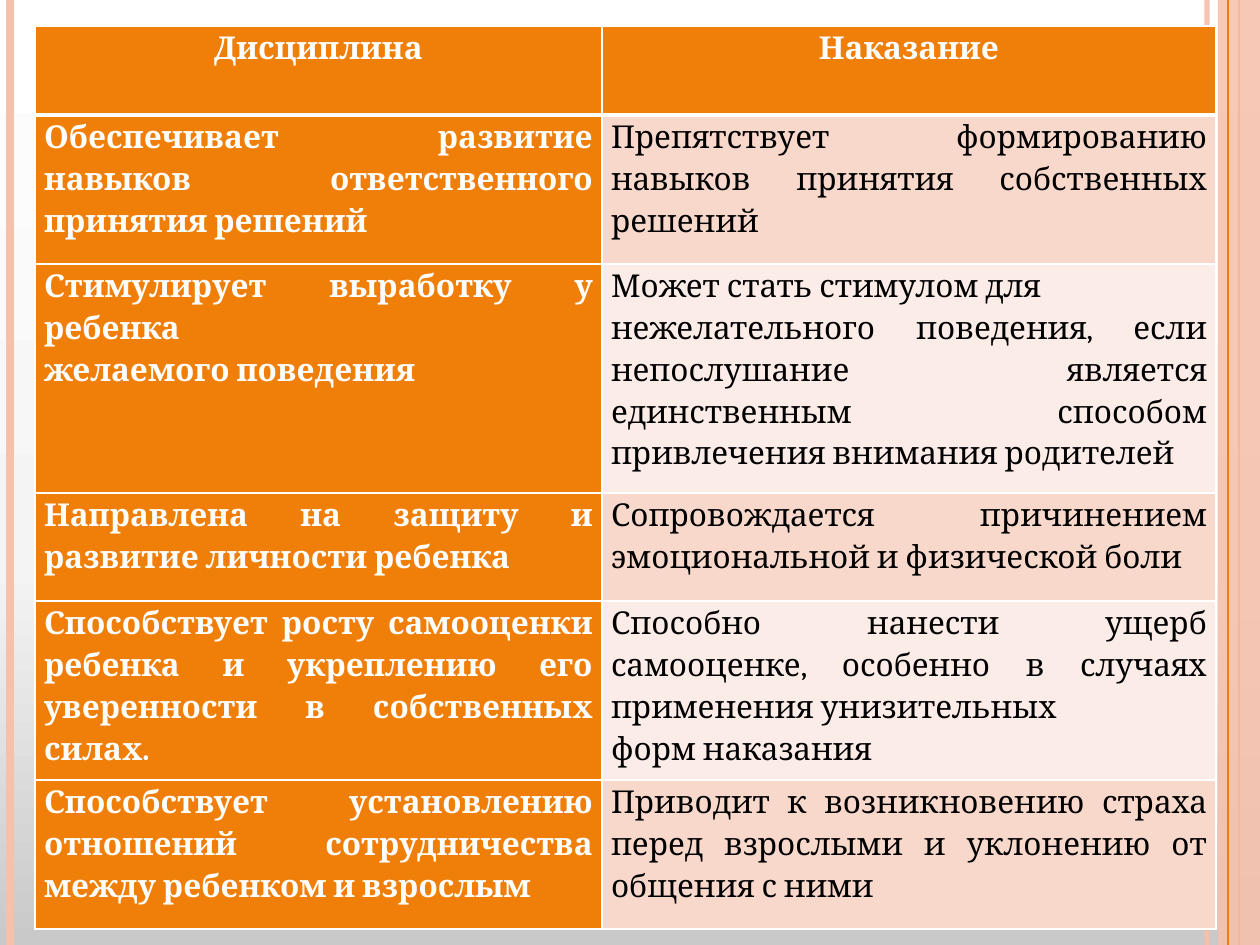
import lxml.etree
import pptx
import pptx.dml.color
import pptx.enum.shapes
import pptx.enum.text
import pptx.oxml.ns
import pptx.util

PX = 914400 / 126
PAGE_WIDTH, PAGE_HEIGHT = 1260, 945
FONT = "Cambria"
COLORS = {
    "accent": "F07F09",
    "stripe": "F6C0AB",
    "band_dark": "F9D8CC",
    "band_light": "FCECE7",
    "white": "FFFFFF",
    "black": "000000",
}
BACKGROUND_STOPS = [(0, "C9C9C9"), (40, "F4F4F4"), (100, "FFFFFF")]
COLUMN_WIDTHS = [567, 614]
ROW_HEIGHTS = [89, 149, 229, 108, 179, 149]
ROWS = [
    ("Дисциплина", "Наказание"),
    ("Обеспечивает развитие навыков ответственного принятия решений",
     "Препятствует формированию навыков принятия собственных решений"),
    ("Стимулирует выработку у ребенка\nжелаемого поведения",
     "Может стать стимулом для\nнежелательного поведения, если непослушание "
     "является единственным способом привлечения внимания родителей"),
    ("Направлена на защиту и развитие личности ребенка",
     "Сопровождается причинением эмоциональной и физической боли"),
    ("Способствует росту самооценки ребенка и укреплению его уверенности "
     "в собственных силах.",
     "Способно нанести ущерб самооценке, особенно в случаях применения "
     "унизительных\nформ наказания"),
    ("Способствует установлению отношений сотрудничества между ребенком "
     "и взрослым",
     "Приводит к возникновению страха перед взрослыми и уклонению от "
     "общения с ними"),
]


def px(length):
    return pptx.util.Emu(round(length * PX))


def rgb(name):
    return pptx.dml.color.RGBColor.from_string(COLORS[name])


def add_xml(parent, tag, **attributes):
    return lxml.etree.SubElement(parent, pptx.oxml.ns.qn(tag), attributes)


def set_opacity(shape, percent):
    color = next(shape.element.spPr.iter(pptx.oxml.ns.qn("a:srgbClr")))
    add_xml(color, "a:alpha", val=str(percent * 1000))


def set_background(page):
    fill = page.background.fill
    fill.gradient()
    fill.gradient_angle = 90
    stops = next(page.element.iter(pptx.oxml.ns.qn("a:gsLst")))
    for stop in list(stops):
        stops.remove(stop)
    for position, color in BACKGROUND_STOPS:
        stop = add_xml(stops, "a:gs", pos=str(position * 1000))
        add_xml(stop, "a:srgbClr", val=color)


def add_vertical_line(page, x, color, width):
    line = page.shapes.add_connector(
        pptx.enum.shapes.MSO_CONNECTOR.STRAIGHT,
        px(x), px(0), px(x), px(PAGE_HEIGHT))
    line.line.color.rgb = rgb(color)
    line.line.width = pptx.util.Pt(width)
    add_xml(line.element.spPr, "a:effectLst")
    return line


def add_band(page, x, width, color):
    band = page.shapes.add_shape(
        pptx.enum.shapes.MSO_SHAPE.RECTANGLE,
        px(x), px(0), px(width), px(PAGE_HEIGHT))
    band.shadow.inherit = False
    band.fill.solid()
    band.fill.fore_color.rgb = rgb(color)
    band.line.fill.background()
    return band


def add_side_stripes(page):
    set_opacity(add_vertical_line(page, 1207, "stripe", 3), 93)
    add_vertical_line(page, 10, "stripe", 4.5)
    add_vertical_line(page, 1239, "accent", 1.5)
    set_opacity(add_band(page, 1218, 42, "stripe"), 87)
    add_vertical_line(page, 1228, "accent", 0.75)


def set_borders(cell, top, bottom):
    """Draw white borders; top and bottom are widths in points."""
    properties = cell._tc.get_or_add_tcPr()
    for side, width in (("L", 1), ("R", 1), ("T", top), ("B", bottom)):
        border = add_xml(properties, f"a:ln{side}", w=str(pptx.util.Pt(width)))
        fill = add_xml(border, "a:solidFill")
        add_xml(fill, "a:srgbClr", val=COLORS["white"])


def fill_cell(cell, text, fill, color, bold, align):
    cell.margin_left = cell.margin_right = px(9)
    cell.margin_top = cell.margin_bottom = 0
    cell.fill.solid()
    cell.fill.fore_color.rgb = rgb(fill)
    cell.text_frame.text = text
    for para in cell.text_frame.paragraphs:
        para.alignment = align
        para.line_spacing = 1.15
        for span in para.runs:
            span.font.name = FONT
            span.font.size = pptx.util.Pt(18)
            span.font.bold = bold
            span.font.color.rgb = rgb(color)


def add_comparison_table(page):
    table = page.shapes.add_table(
        len(ROWS), len(COLUMN_WIDTHS), px(35), px(26),
        px(sum(COLUMN_WIDTHS)), px(sum(ROW_HEIGHTS))).table
    for column, width in zip(table.columns, COLUMN_WIDTHS):
        column.width = px(width)
    for row, height in zip(table.rows, ROW_HEIGHTS):
        row.height = px(height)

    alignment = pptx.enum.text.PP_ALIGN
    for row_index, texts in enumerate(ROWS):
        header = row_index == 0
        band = "band_dark" if row_index % 2 else "band_light"
        for column_index, text in enumerate(texts):
            strong = header or column_index == 0
            cell = table.cell(row_index, column_index)
            set_borders(cell, top=3 if row_index == 1 else 1,
                        bottom=3 if header else 1)
            fill_cell(cell, text,
                      fill="accent" if strong else band,
                      color="white" if strong else "black",
                      bold=strong,
                      align=alignment.CENTER if header else alignment.JUSTIFY)


def main():
    deck = pptx.Presentation()
    deck.slide_width, deck.slide_height = px(PAGE_WIDTH), px(PAGE_HEIGHT)
    page = deck.slides.add_slide(deck.slide_layouts[6])
    set_background(page)
    add_side_stripes(page)
    add_comparison_table(page)
    deck.save("out.pptx")


if __name__ == "__main__":
    main()
